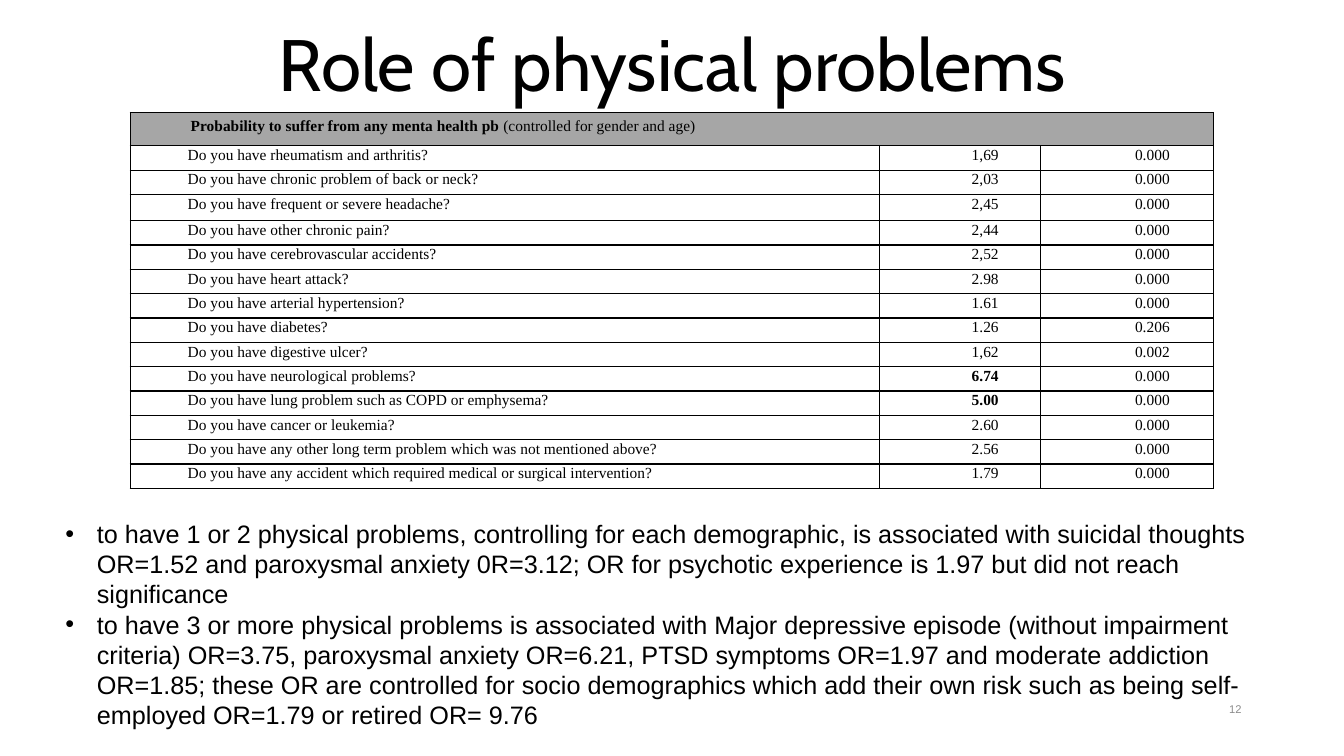
from dataclasses import dataclass

from lxml.etree import SubElement
from pptx import Presentation
from pptx.dml.color import RGBColor
from pptx.enum.text import MSO_ANCHOR, MSO_AUTO_SIZE, PP_ALIGN
from pptx.oxml.ns import qn
from pptx.util import Inches, Pt

# Square grid: 160 columns by 90 rows
COLUMNS, ROWS = 160, 90
SLIDE_WIDTH, SLIDE_HEIGHT = Inches(13.33), Inches(7.5)


@dataclass(frozen=True)
class Theme:
    ink: str = "000000"
    muted: str = "8C8C8C"
    header_fill: str = "A6A6A6"
    paper: str = "FFFFFF"
    title_font: str = "Cabin"
    body_font: str = "Arial"
    table_font: str = "Times New Roman"
    title_size: int = 52
    body_size: int = 18
    table_size: int = 11
    number_size: int = 8
    rule_width: int = 1


@dataclass(frozen=True)
class Box:
    """A region in grid columns and rows."""
    left: float
    top: float
    width: float
    height: float

    def place(self):
        return (across(self.left), down(self.top),
                across(self.width), down(self.height))


THEME = Theme()
TABLE_TITLE = [("Probability to suffer from any menta health pb", True),
               (" (controlled for gender and age)", False)]
ODDS_RATIOS = [
    ("Do you have rheumatism and arthritis?", "1,69", "0.000"),
    ("Do you have chronic problem of back or neck?", "2,03", "0.000"),
    ("Do you have frequent or severe headache?", "2,45", "0.000"),
    ("Do you have other chronic pain?", "2,44", "0.000"),
    ("Do you have cerebrovascular accidents?", "2,52", "0.000"),
    ("Do you have heart attack?", "2.98", "0.000"),
    ("Do you have arterial hypertension?", "1.61", "0.000"),
    ("Do you have diabetes?", "1.26", "0.206"),
    ("Do you have digestive ulcer?", "1,62", "0.002"),
    ("Do you have neurological problems?", "6.74", "0.000"),
    ("Do you have lung problem such as COPD or emphysema?", "5.00", "0.000"),
    ("Do you have cancer or leukemia?", "2.60", "0.000"),
    ("Do you have any other long term problem which was not mentioned above?",
     "2.56", "0.000"),
    ("Do you have any accident which required medical or surgical intervention?",
     "1.79", "0.000"),
]
STRONGEST = {"6.74", "5.00"}
FINDINGS = [
    "to have 1 or 2 physical problems, controlling for each demographic, is "
    "associated with suicidal thoughts OR=1.52 and paroxysmal anxiety 0R=3.12; "
    "OR for psychotic experience is 1.97 but did not reach significance",
    "to have 3 or more physical problems is associated with Major depressive "
    "episode (without impairment criteria) OR=3.75, paroxysmal anxiety OR=6.21, "
    "PTSD symptoms OR=1.97 and moderate addiction OR=1.85; these OR are "
    "controlled for socio demographics which add their own risk such as being "
    "self-employed OR=1.79 or retired OR= 9.76",
]


def across(columns):
    return round(SLIDE_WIDTH * columns / COLUMNS)


def down(rows):
    return round(SLIDE_HEIGHT * rows / ROWS)


def write(paragraph, text, *, font, size, color=THEME.ink, bold=False,
          align=PP_ALIGN.LEFT, indent=0, bullet=None, line_spacing=None):
    """Add text, either a string or (string, bold) pairs, to a paragraph."""
    properties = paragraph._p.get_or_add_pPr()
    properties.set("marL", str(across(indent)))
    properties.set("indent", str(-across(indent) if bullet else 0))
    if bullet and properties.find(qn("a:buChar")) is None:
        SubElement(properties, qn("a:buFont")).set("typeface", font)
        SubElement(properties, qn("a:buChar")).set("char", bullet)
    paragraph.alignment = align
    if line_spacing:
        paragraph.line_spacing = line_spacing
    pieces = [(text, bold)] if isinstance(text, str) else text
    for words, is_bold in pieces:
        run = paragraph.add_run()
        run.text = words
        run.font.name, run.font.size = font, Pt(size)
        run.font.bold = is_bold
        run.font.color.rgb = RGBColor.from_string(color)


def add_text(slide, box, texts, anchor=MSO_ANCHOR.TOP, grow=False, **style):
    frame = slide.shapes.add_textbox(*box.place()).text_frame
    frame.word_wrap = True
    frame.vertical_anchor = anchor
    frame.auto_size = MSO_AUTO_SIZE.SHAPE_TO_FIT_TEXT if grow else MSO_AUTO_SIZE.NONE
    for index, text in enumerate(texts):
        paragraph = frame.add_paragraph() if index else frame.paragraphs[0]
        write(paragraph, text, **style)


def style_cell(cell, fill, margins):
    (cell.margin_left, cell.margin_top,
     cell.margin_right, cell.margin_bottom) = map(Inches, margins)
    properties = cell._tc.get_or_add_tcPr()
    # Borders come before the fill
    for side in ("a:lnL", "a:lnR", "a:lnT", "a:lnB"):
        line = SubElement(properties, qn(side), w=str(Pt(THEME.rule_width)))
        SubElement(SubElement(line, qn("a:solidFill")), qn("a:srgbClr"), val=THEME.ink)
    cell.fill.solid()
    cell.fill.fore_color.rgb = RGBColor.from_string(fill)


def add_odds_table(slide, box):
    table = slide.shapes.add_table(len(ODDS_RATIOS) + 1, 3, *box.place()).table
    table.first_row = table.horz_banding = False
    for column, share in zip(table.columns, (7.44, 1.6, 1.72)):
        column.width = across(box.width * share / 10.76)
    for row in table.rows:
        row.height = down(2.9)
    table.rows[0].height = down(3.96)
    table.rows[3].height = down(3.12)
    style = dict(font=THEME.table_font, size=THEME.table_size, indent=6)

    # Heading across all columns
    for cell in table.rows[0].cells:
        style_cell(cell, THEME.header_fill, (0.1, 0.05, 0.1, 0.05))
    heading = table.cell(0, 0)
    heading.merge(table.cell(0, 2))
    write(heading.text_frame.paragraphs[0], TABLE_TITLE, **style)

    # One row for each physical problem
    for row, values in enumerate(ODDS_RATIOS, start=1):
        for column, value in enumerate(values):
            cell = table.cell(row, column)
            style_cell(cell, THEME.paper, (0.07, 0.01, 0.07, 0))
            write(cell.text_frame.paragraphs[0], value, bold=value in STRONGEST,
                  align=PP_ALIGN.CENTER if column else PP_ALIGN.LEFT, **style)


def add_title(slide, box):
    add_text(slide, box, ["Role of physical problems"], anchor=MSO_ANCHOR.BOTTOM,
             font=THEME.title_font, size=THEME.title_size,
             align=PP_ALIGN.CENTER, line_spacing=0.9)


def add_findings(slide, box):
    add_text(slide, box, FINDINGS, grow=True, font=THEME.body_font,
             size=THEME.body_size, indent=3.75, bullet="•")


def add_slide_number(slide, box):
    add_text(slide, box, ["12"], anchor=MSO_ANCHOR.MIDDLE, font=THEME.body_font,
             size=THEME.number_size, color=THEME.muted, align=PP_ALIGN.RIGHT)


def main():
    deck = Presentation()
    deck.slide_width, deck.slide_height = SLIDE_WIDTH, SLIDE_HEIGHT
    slide = deck.slides.add_slide(deck.slide_layouts[6])
    add_slide_number(slide, Box(113, 82, 36, 4.8))
    add_title(slide, Box(11, -3.4, 138, 16.8))
    add_odds_table(slide, Box(15.5, 13.4, 129, 44.5))
    add_findings(slide, Box(6.6, 61.1, 148, 23))
    deck.save("out.pptx")


if __name__ == "__main__":
    main()
